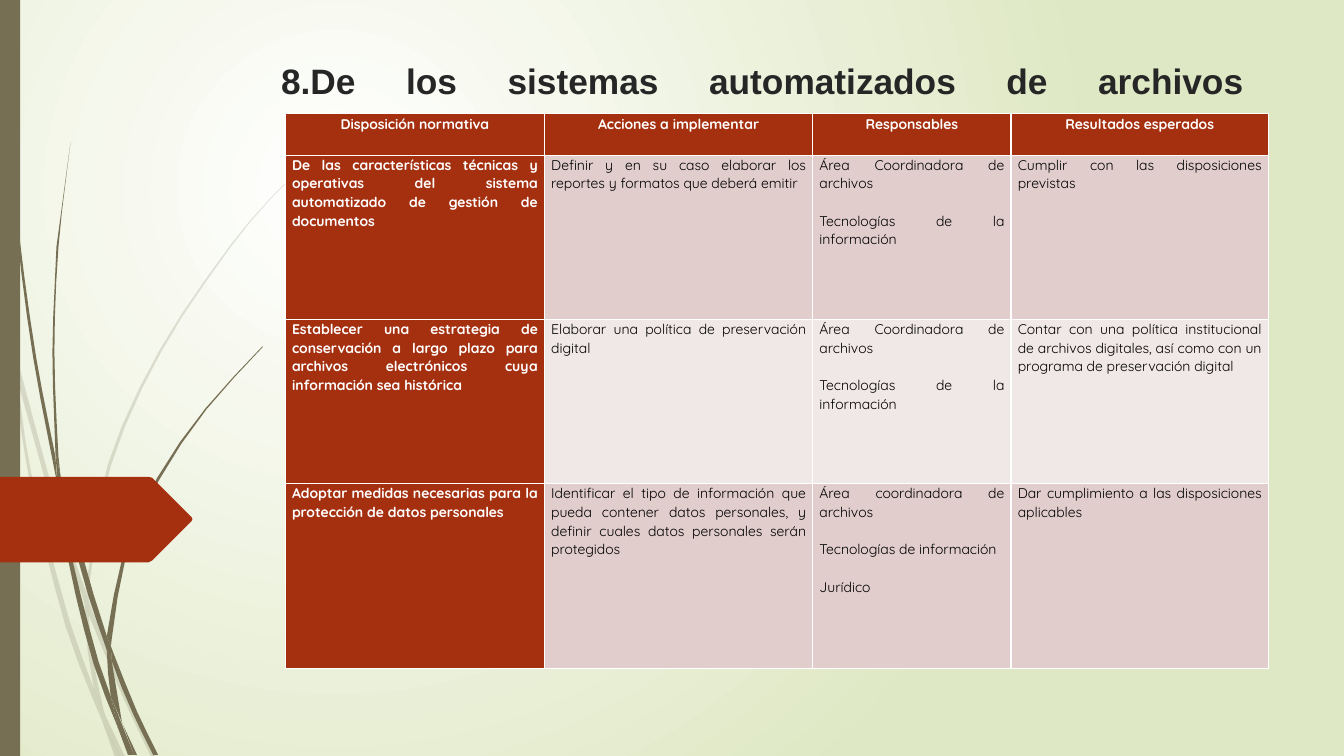
import math

import pptx
import pptx.enum.shapes
import pptx.enum.text
import pptx.oxml
import pptx.oxml.ns
from pptx.dml.color import RGBColor
from pptx.util import Cm, Pt

WHITE = RGBColor(0xFF, 0xFF, 0xFF)
BLACK = RGBColor(0x00, 0x00, 0x00)
INK = RGBColor(0x26, 0x26, 0x26)
LIME = RGBColor(0xDF, 0xE8, 0xC4)
OLIVE = RGBColor(0x76, 0x6F, 0x54)
RUST = RGBColor(0xA5, 0x30, 0x10)
ROSE = RGBColor(0xE1, 0xCD, 0xCC)
BLUSH = RGBColor(0xF0, 0xE8, 0xE7)

ALIGN = pptx.enum.text.PP_ALIGN
GRID = Cm(0.0254)  # step of the grid that the outlines are drawn on

# Each blade has a way out and a way back, in grid steps.
PALE = [
    [[(11, 350), (9, 322), (0, 282)], [(0, 299), (10, 344)]],
    [[(17, 376), (58, 522), (84, 599)], [(85, 586), (62, 520), (14, 345)]],
    [[(88, 610), (123, 694), (150, 751)],
     [(155, 751), (127, 692), (92, 607), (88, 596)]],
    [[(105, 711), (119, 751)], [(124, 751)]],
    [[(11, 350), (28, 470), (65, 621), (92, 693), (101, 714)],
     [(99, 707), (93, 683), (70, 619), (31, 469), (17, 376)]],
    [[(84, 599), (87, 646), (93, 683), (105, 711)],
     [(103, 706), (91, 646), (88, 608)]],
    [[(88, 596), (88, 584), (110, 462), (160, 349), (229, 245), (268, 198),
      (312, 154)],
     [(312, 153), (268, 197), (228, 244), (158, 348), (107, 461),
      (85, 584)]],
    [[(101, 714), (114, 751)], [(119, 751)]],
    [[(88, 608), (88, 596)], [(85, 586), (84, 599)]],
    [[(93, 683), (101, 714)], [(119, 751), (105, 711)]],
]
DARK = [
    [[(3, 0), (7, 110), (17, 233), (33, 355), (57, 481)],
     [(55, 453), (36, 355), (19, 232), (8, 109), (4, 0)]],
    [[(64, 505), (88, 592), (106, 645)], [(106, 631), (93, 590), (60, 472)]],
    [[(110, 641), (111, 656), (132, 708), (152, 749)],
     [(157, 749), (136, 706), (113, 649)]],
    [[(57, 477), (68, 557), (93, 659), (117, 722)],
     [(110, 691), (98, 657), (72, 556), (64, 505)]],
    [[(60, 472), (58, 453), (54, 349), (58, 245), (70, 141)],
     [(56, 245), (52, 349), (55, 449)]],
    [[(122, 719), (133, 749)], [(136, 749)]],
    [[(57, 477), (64, 505)], [(60, 472), (55, 449)]],
    [[(110, 641), (111, 633), (125, 552), (158, 476), (205, 406), (261, 344)],
     [(260, 344), (204, 405), (156, 474), (122, 551), (106, 631)]],
    [[(117, 722), (127, 749)], [(131, 749)]],
    [[(106, 645), (110, 691), (122, 719)], [(121, 716), (111, 656)]],
    [[(106, 645), (111, 656)], [(110, 641), (106, 631)]],
    [[(110, 691), (117, 722), (130, 749)], [(133, 749), (116, 706)]],
]
TAG = [(0, 473), (147, 473), (151, 474), (190, 513), (191, 515),
       (190, 517), (151, 556), (147, 558), (0, 558)]

HEADS = ["Disposición normativa", "Acciones a implementar", "Responsables",
         "Resultados esperados"]
AREA = "Área Coordinadora de archivos\nTecnologías de la información"
ROWS = [
    ["De las características técnicas y operativas del sistema automatizado "
     "de gestión de documentos",
     "Definir y en su caso elaborar los reportes y formatos que deberá emitir",
     AREA,
     "Cumplir con las disposiciones previstas"],
    ["Establecer una estrategia de conservación a largo plazo para archivos "
     "electrónicos cuya información sea histórica",
     "Elaborar una política de preservación digital",
     AREA,
     "Contar con una política institucional de archivos digitales, así como "
     "con un programa de preservación digital"],
    ["Adoptar medidas necesarias para la protección de datos personales",
     "Identificar el tipo de información que pueda contener datos personales, "
     "y definir cuales datos personales serán protegidos",
     "Área coordinadora de archivos\nTecnologías de información\nJurídico",
     "Dar cumplimiento a las disposiciones aplicables"],
]


def node(tag, **attrs):
    item = pptx.oxml.parse_xml(f"<a:{tag} {pptx.oxml.ns.nsdecls('a')}/>")
    for name, value in attrs.items():
        item.set(name, str(value))
    return item


def smooth(knots):
    """Return points on a curve that runs through all the knots."""
    if len(knots) < 3:
        return list(knots)
    slopes = []
    for i in range(len(knots)):
        near = knots[max(i - 1, 0):i + 2]
        span = sum(math.dist(p, q) for p, q in zip(near, near[1:]))
        slopes.append([(b - a) / span for a, b in zip(near[0], near[-1])])
    curve = [knots[0]]
    for p, q, m, n in zip(knots, knots[1:], slopes, slopes[1:]):
        gap = math.dist(p, q)
        steps = math.ceil(gap / 45)
        for t in (s / steps for s in range(1, steps + 1)):
            ease = t * t * (3 - 2 * t)
            rise, fall = gap * t * (1 - t) ** 2, gap * t * t * (1 - t)
            curve.append([a + (b - a) * ease + u * rise - v * fall
                          for a, b, u, v in zip(p, q, m, n)])
    return curve


class Deck:
    head_font, cell_font = "Arial", "Quicksand"

    def __init__(self):
        self.file = pptx.Presentation()
        self.file.slide_width, self.file.slide_height = Cm(33.87), Cm(19.05)
        self.slide = self.file.slides.add_slide(self.file.slide_layouts[5])
        self.shapes = self.slide.shapes

    def glow(self, inner, outer):
        fill = self.slide.background.fill
        fill.gradient()
        for stop, color in zip(fill.gradient_stops, (inner, outer)):
            stop.color.rgb = color
        grad = self.slide.element.find(".//" + pptx.oxml.ns.qn("a:gradFill"))
        grad.remove(grad.find(pptx.oxml.ns.qn("a:lin")))
        way = node("path", path="circle")
        way.append(node("fillToRect", l=50000, t=50000, r=100000, b=100000))
        grad.append(way)

    def paint(self, shape, color, alpha=100):
        shape.shadow.inherit = False
        shape.fill.solid()
        shape.fill.fore_color.rgb = color
        shape.line.fill.background()
        if alpha < 100:
            tone = shape.element.spPr.find(".//" + pptx.oxml.ns.qn("a:srgbClr"))
            tone.append(node("alpha", val=alpha * 1000))

    def outline(self, shapes, sides, color, alpha=100):
        points = [(round(x * GRID), round(y * GRID))
                  for side in sides for x, y in smooth(side)]
        pen = shapes.build_freeform(*points[0])
        pen.add_line_segments(points[1:], close=True)
        self.paint(pen.convert_to_shape(), color, alpha)

    def grass(self, blades, color, alpha=100):
        group = self.shapes.add_group_shape()
        for sides in blades:
            self.outline(group.shapes, sides, color, alpha)

    def bar(self, x, y, w, h, color):
        kind = pptx.enum.shapes.MSO_SHAPE.RECTANGLE
        self.paint(self.shapes.add_shape(kind, Cm(x), Cm(y), Cm(w), Cm(h)), color)

    def style(self, par, font, size, color, bold, align):
        par.alignment = align
        for run in par.runs:
            run.font.name, run.font.size = font, Pt(size)
            run.font.bold, run.font.color.rgb = bold, color

    def title(self, text, x, y, w, h):
        box = self.shapes.title
        box.left, box.top, box.width, box.height = Cm(x), Cm(y), Cm(w), Cm(h)
        frame = box.text_frame
        frame.word_wrap = True
        frame.auto_size = pptx.enum.text.MSO_AUTO_SIZE.NONE
        frame.vertical_anchor = pptx.enum.text.MSO_ANCHOR.TOP
        frame.margin_top = Cm(0.08)
        frame.text = text + "\v"  # the break stretches the justified line
        self.style(frame.paragraphs[0], self.head_font, 25.2, INK, True,
                   ALIGN.JUSTIFY)

    def cell(self, cell, text, fill, color, bold, align):
        cell.margin_left = cell.margin_right = Cm(0.17)
        cell.margin_top = cell.margin_bottom = 0
        cell.text_frame.text = text
        for i, par in enumerate(cell.text_frame.paragraphs):
            par.line_spacing = 1.07
            par.space_before = Pt(13.3 if i else 0)
            self.style(par, self.cell_font, 10, color, bold, align)
        cell.fill.solid()
        cell.fill.fore_color.rgb = fill

    def table(self, rows, x, y, widths, heights):
        grid = self.shapes.add_table(
            len(rows), len(widths), Cm(x), Cm(y), Cm(sum(widths)),
            Cm(sum(heights))).table
        for col, width in zip(grid.columns, widths):
            col.width = Cm(width)
        for i, (row, height) in enumerate(zip(rows, heights)):
            grid.rows[i].height = Cm(height)
            align = ALIGN.JUSTIFY if i else ALIGN.CENTER
            for j, text in enumerate(row):
                strong = i == 0 or j == 0
                fill = RUST if strong else ROSE if i % 2 else BLUSH
                self.cell(grid.cell(i, j), text, fill,
                          WHITE if strong else BLACK, strong, align)


def main():
    deck = Deck()
    deck.glow(WHITE, LIME)
    deck.grass(PALE, OLIVE, 20)
    deck.grass(DARK, OLIVE)
    deck.bar(0, 0, 0.51, 19.05, OLIVE)
    deck.outline(deck.shapes, [[point] for point in TAG], RUST)
    deck.title("8.De los sistemas automatizados de archivos",
               6.83, 1.42, 24.77, 2.11)
    deck.table([HEADS, *ROWS], 7.19, 2.87, [6.53, 6.76, 5, 6.48],
               [1.04, 4.14, 4.14, 4.65])
    deck.file.save("out.pptx")


if __name__ == "__main__":
    main()
